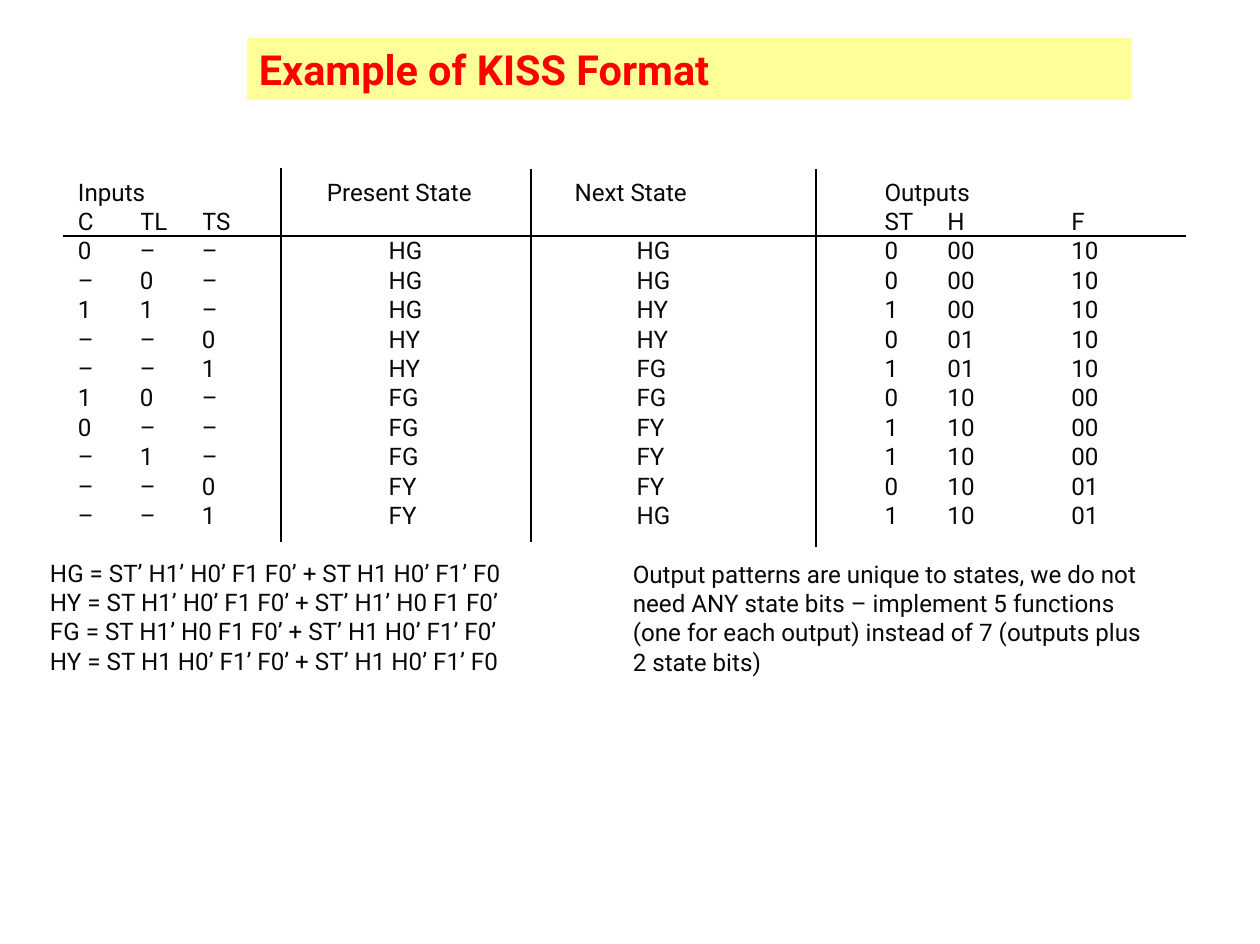
from pptx import Presentation
from pptx.dml.color import RGBColor
from pptx.enum.shapes import MSO_CONNECTOR
from pptx.enum.text import MSO_ANCHOR, MSO_AUTO_SIZE, PP_ALIGN
from pptx.oxml.ns import qn
from pptx.util import Inches, Pt
from lxml import etree

STRAIGHT = MSO_CONNECTOR.STRAIGHT
TOP, LEFT = MSO_ANCHOR.TOP, PP_ALIGN.LEFT
NO_FIT = MSO_AUTO_SIZE.NONE

INK = RGBColor(0x08, 0x08, 0x08)
BLACK = RGBColor(0x00, 0x00, 0x00)
RED = RGBColor(0xFF, 0x00, 0x00)
YELLOW = RGBColor(0xFF, 0xFF, 0x99)

TAB = 62
COLUMN_WIDTHS = [TAB, TAB, 125, 4 * TAB, 5 * TAB, TAB + 1, 2 * TAB, 114]
STATE_COLUMNS = (3, 4)
HEADERS = [
    ["Inputs", "", "", "Present State", "Next State", "Outputs", "", ""],
    ["C", "TL", "TS", "", "", "ST", "H", "F"],
]
TRANSITIONS = [row.split() for row in (
    "0 – – HG HG 0 00 10",
    "– 0 – HG HG 0 00 10",
    "1 1 – HG HY 1 00 10",
    "– – 0 HY HY 0 01 10",
    "– – 1 HY FG 1 01 10",
    "1 0 – FG FG 0 10 00",
    "0 – – FG FY 1 10 00",
    "– 1 – FG FY 1 10 00",
    "– – 0 FY FY 0 10 01",
    "– – 1 FY HG 1 10 01",
)]
RULES = [
    (63, 236, 1186, 236),
    (281, 168, 281, 542),
    (531, 169, 531, 542),
    (816, 169, 816, 547),
]
EQUATIONS = [
    "HG = ST’ H1’ H0’ F1 F0’ + ST H1 H0’ F1’ F0",
    "HY = ST H1’ H0’ F1 F0’ + ST’ H1’ H0 F1 F0’",
    "FG = ST H1’ H0 F1 F0’ + ST’ H1 H0’ F1’ F0’",
    "HY = ST H1 H0’ F1’ F0’ + ST’ H1 H0’ F1’ F0",
]
CONCLUSION = (
    "Output patterns are unique to states, we do not need ANY state bits – "
    "implement 5 functions (one for each output) instead of 7 "
    "(outputs plus 2 state bits)"
)


def px(length):
    return round(length * 914400 / 124.3)


class SlideBuilder:
    font_name = "Roboto"
    body_size = Pt(14)
    line_pitch = Pt(17)

    def __init__(self, deck):
        self.slide = deck.slides.add_slide(deck.slide_layouts[5])

    def style_font(self, font, size, color, bold=False):
        font.name, font.size, font.bold = self.font_name, size, bold
        font.color.rgb = color

    def style_body(self, frame):
        for para in frame.paragraphs:
            para.alignment = LEFT
            para.line_spacing = self.line_pitch
            for run in para.runs:
                self.style_font(run.font, self.body_size, INK)

    def title(self, text, left, top, width, height):
        box = self.slide.shapes.title
        box.left, box.top, box.width, box.height = map(px, (left, top, width, height))
        box.fill.solid()
        box.fill.fore_color.rgb = YELLOW
        frame = box.text_frame
        frame.text = text
        frame.auto_size = NO_FIT
        frame.vertical_anchor = TOP
        frame.margin_left, frame.margin_top, frame.margin_bottom = px(12), px(6), 0
        para = frame.paragraphs[0]
        para.alignment = LEFT
        self.style_font(para.runs[0].font, Pt(24), RED, bold=True)

    def text(self, lines, left, top, width, height):
        box = self.slide.shapes.add_textbox(*map(px, (left, top, width, height)))
        frame = box.text_frame
        frame.word_wrap = True
        frame.margin_left = frame.margin_right = px(2)
        frame.margin_top = frame.margin_bottom = px(4)
        frame.text = "\n".join(lines)
        self.style_body(frame)

    def state_table(self, rows, left, top, height):
        frame = self.slide.shapes.add_table(
            len(rows), len(COLUMN_WIDTHS), px(left), px(top),
            px(sum(COLUMN_WIDTHS)), px(height))
        table = frame.table
        table.first_row = table.horz_banding = False
        for column, width in zip(table.columns, COLUMN_WIDTHS):
            column.width = px(width)
        for row_index, values in enumerate(rows):
            table.rows[row_index].height = px(height) // len(rows)
            for column_index, value in enumerate(values):
                cell = table.cell(row_index, column_index)
                indented = row_index >= len(HEADERS) and column_index in STATE_COLUMNS
                cell.margin_left = px(TAB) if indented else 0
                cell.margin_right = cell.margin_top = cell.margin_bottom = 0
                cell.vertical_anchor = TOP
                cell.fill.background()
                cell.text_frame.text = value
                self.style_body(cell.text_frame)
                if not value:
                    self.style_font(cell.text_frame.paragraphs[0].font, self.body_size, INK)
        for first, last in ((0, 2), (5, 7)):
            table.cell(0, first).merge(table.cell(0, last))

    def rule(self, *ends):
        line = self.slide.shapes.add_connector(STRAIGHT, *map(px, ends))
        line.line.color.rgb = BLACK
        line.line.width = Pt(1)
        etree.SubElement(line._element.spPr, qn("a:effectLst"))


def main():
    deck = Presentation()
    deck.slide_width, deck.slide_height = Inches(10.14), Inches(7.6)
    page = SlideBuilder(deck)
    page.title("Example of KISS Format", 247, 38, 885, 62)
    page.state_table(HEADERS + TRANSITIONS, 78, 178, 352)
    for ends in RULES:
        page.rule(*ends)
    page.text(EQUATIONS, 48, 554, 560, 126)
    page.text([CONCLUSION], 631, 555, 518, 126)
    deck.save("out.pptx")


if __name__ == "__main__":
    main()
